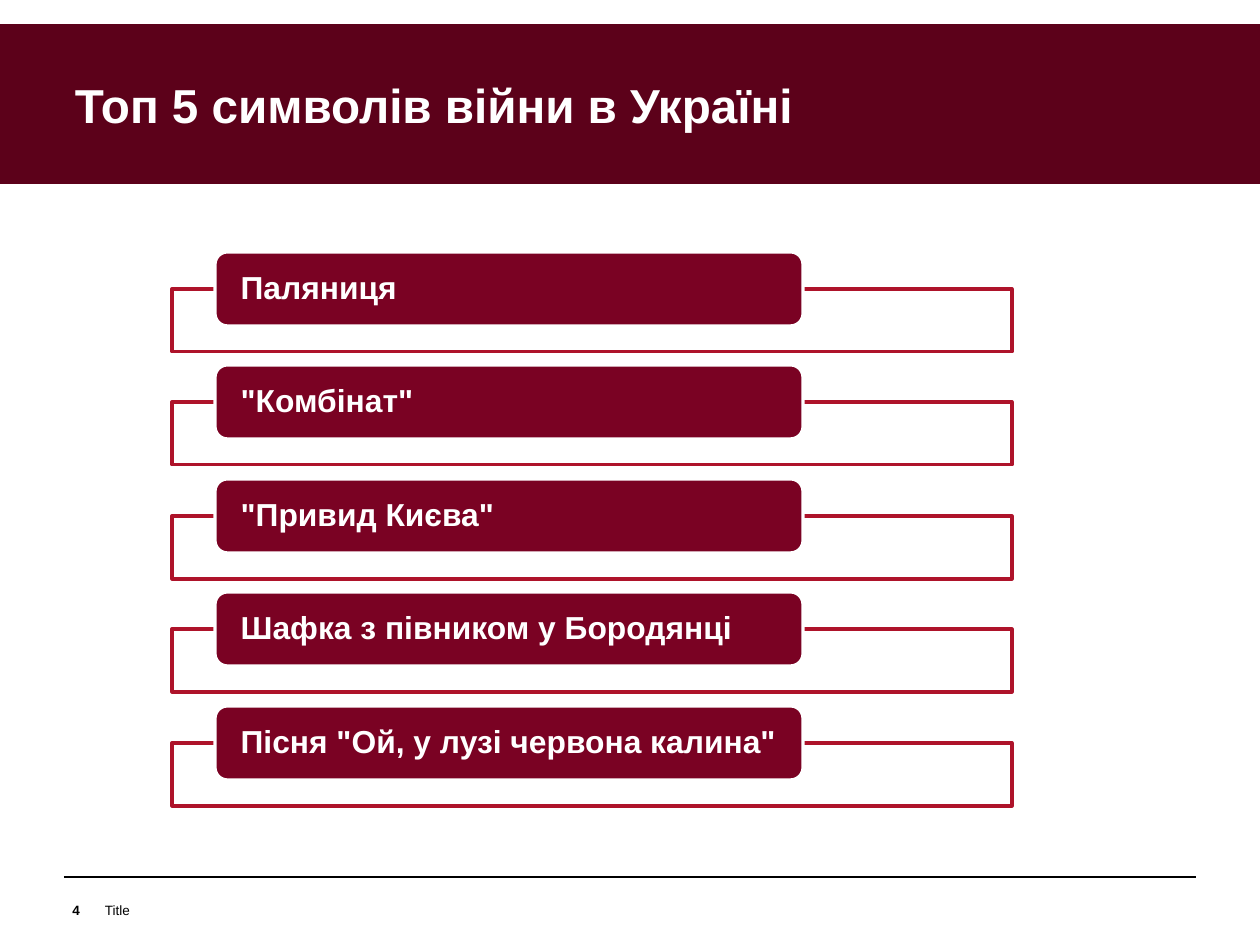
from lxml import etree
from pptx import Presentation
from pptx import util as u
from pptx.dml.color import RGBColor
from pptx.enum import shapes, text
from pptx.oxml.ns import qn

PX = 8000  # EMU per pixel
COLORS = {
    "band": "5C011A",
    "label": "7A0223",
    "frame": "AE132A",
    "white": "FFFFFF",
    "black": "000000",
}
SYMBOLS = [
    "Паляниця",
    '"Комбінат"',
    '"Привид Києва"',
    "Шафка з півником у Бородянці",
    'Пісня "Ой, у лузі червона калина"',
]
ROW_PITCH = 113.4

presentation = Presentation()
presentation.slide_width = 1260 * PX
presentation.slide_height = 945 * PX
slide = presentation.slides.add_slide(presentation.slide_layouts[6])


def add_box(kind, left, top, width, height, fill, line, points):
    shape = slide.shapes.add_shape(kind, left * PX, top * PX, width * PX, height * PX)
    shape.shadow.inherit = False
    shape.fill.solid()
    shape.fill.fore_color.rgb = RGBColor.from_string(COLORS[fill])
    shape.line.color.rgb = RGBColor.from_string(COLORS[line])
    shape.line.width = u.Pt(points)
    return shape


def write_text(shape, content, size, color="white", bold=False, align="LEFT",
               anchor="TOP", margins=(0, 0, 0, 0), wrap=True, spacing=None):
    frame = shape.text_frame
    frame.word_wrap = wrap
    frame.vertical_anchor = text.MSO_ANCHOR[anchor]
    frame.margin_left, frame.margin_top, frame.margin_right, frame.margin_bottom = (
        margin * PX for margin in margins)
    paragraph = frame.paragraphs[0]
    paragraph.text = content
    paragraph.alignment = text.PP_ALIGN[align]
    paragraph.line_spacing = spacing
    font = paragraph.font
    font.name = "Arial"
    font.size = u.Pt(size)
    font.bold = bold
    font.color.rgb = RGBColor.from_string(COLORS[color])


# Footer
number_box = slide.shapes.add_textbox(63 * PX, 902 * PX, 17 * PX, 16 * PX)
write_text(number_box, "4", 8.5, color="black", bold=True, align="RIGHT")
footer_box = slide.shapes.add_textbox(105 * PX, 902 * PX, 382 * PX, 16 * PX)
write_text(footer_box, "Title", 8.5, color="black")

rule = slide.shapes.add_connector(
    shapes.MSO_CONNECTOR.STRAIGHT, 64 * PX, 877 * PX, 1196 * PX, 877 * PX)
rule.line.color.rgb = RGBColor.from_string(COLORS["black"])
rule.line.width = u.Pt(0.75)
etree.SubElement(rule._element.spPr, qn("a:effectLst"))

# Title band
add_box(shapes.MSO_SHAPE.RECTANGLE, 0, 25, 1260, 158, "band", "band", 1)
title_box = slide.shapes.add_textbox(64 * PX, 70 * PX, 889 * PX, 70 * PX)
write_text(title_box, "Топ 5 символів війни в Україні", 30, bold=True,
           margins=(11, 6, 11, 6))

# Symbols: an open frame with a label over its top edge
for row, symbol in enumerate(SYMBOLS):
    top = round(252 + row * ROW_PITCH)
    frame_box = add_box(shapes.MSO_SHAPE.RECTANGLE, 172, top + 37, 840, 63,
                        "white", "frame", 2)
    color = frame_box.fill._xPr.find(qn("a:solidFill"))[0]
    etree.SubElement(color, qn("a:alpha"), val="90000")

    label = add_box(shapes.MSO_SHAPE.ROUNDED_RECTANGLE, 215, top, 588, 74,
                    "label", "white", 2)
    write_text(label, symbol, 20, bold=True, anchor="MIDDLE",
               margins=(22, 0, 8, 0), spacing=0.9)

presentation.save("out.pptx")
